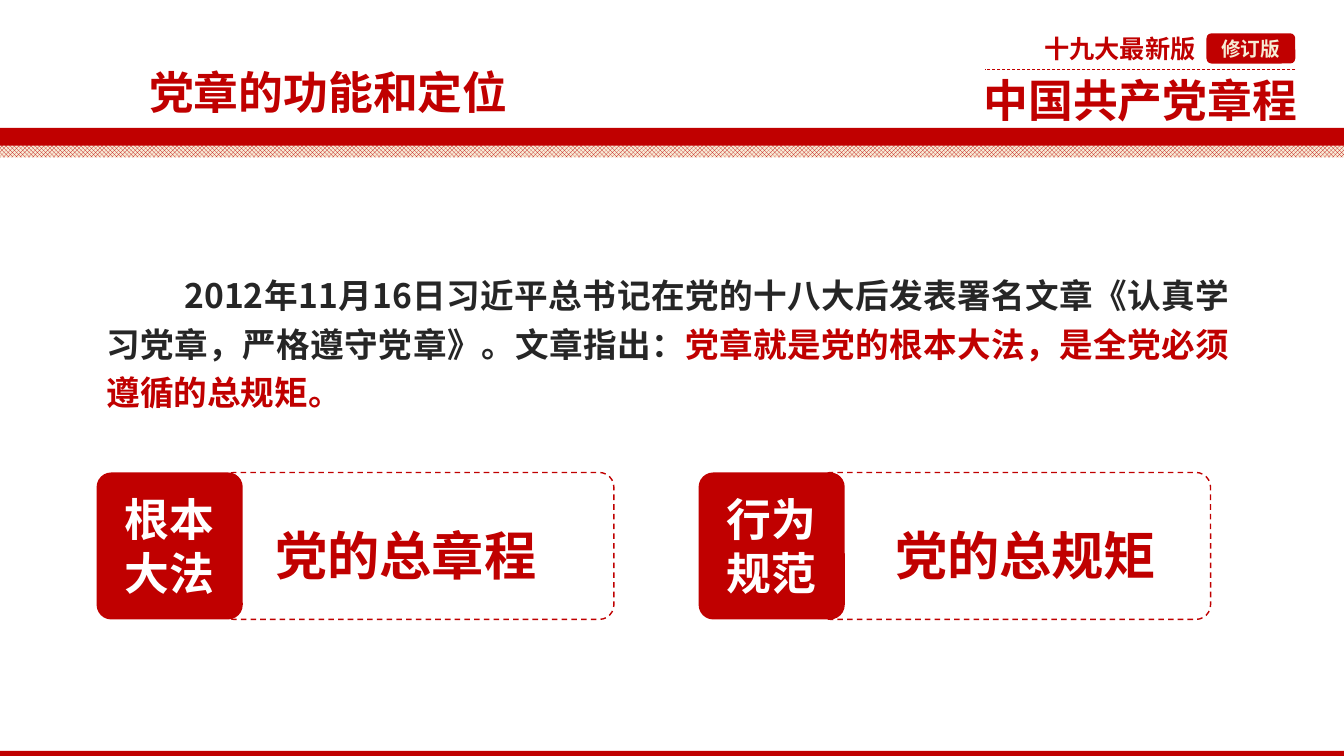
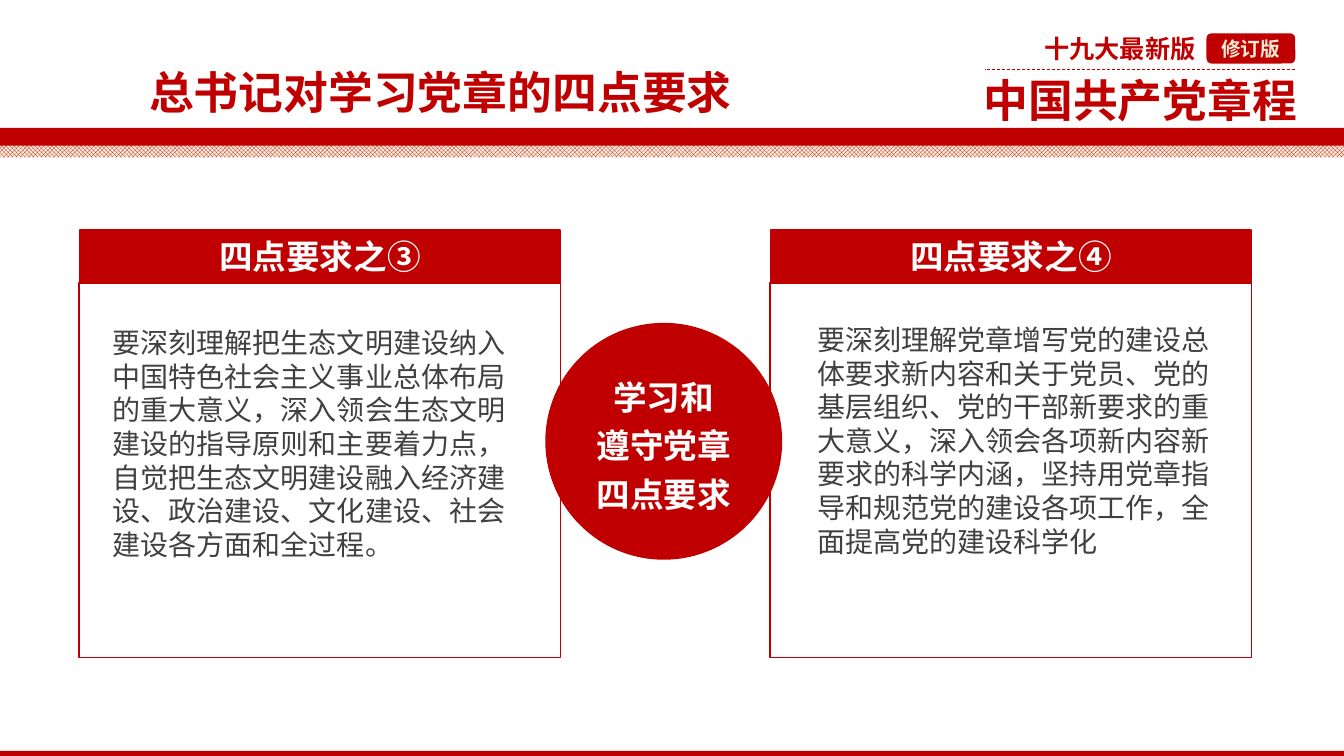
from lxml import etree
from pptx import Presentation
from pptx.dml.color import RGBColor
from pptx.enum import dml, shapes, text
from pptx.oxml.ns import qn
from pptx.util import Pt

RED, WHITE, CREAM, DARK, GREY = "C00000", "FFFFFF", "F6EDD6", "262626", "404040"
CJK = "Noto Sans CJK SC"
W, H = 960, 540
LEFT, CENTER, RIGHT, JUSTIFY = (text.PP_ALIGN.LEFT, text.PP_ALIGN.CENTER,
                                text.PP_ALIGN.RIGHT, text.PP_ALIGN.JUSTIFY)
TOP, MIDDLE = text.MSO_ANCHOR.TOP, text.MSO_ANCHOR.MIDDLE
RECT, ROUND, OVAL = (shapes.MSO_SHAPE.RECTANGLE, shapes.MSO_SHAPE.ROUNDED_RECTANGLE,
                     shapes.MSO_SHAPE.OVAL)

BRAND, EDITION, BADGE = "中国共产党章程", "十九大最新版", "修订版"

ROLE_TITLE = "党章的功能和定位"
ROLE_INTRO = [
    ("2012年11月16日习近平总书记在党的十八大后发表署名文章《认真学习党章，严格遵守党章》。文章指出：", DARK),
    ("党章就是党的根本大法，是全党必须遵循的总规矩。", RED),
]
# tag, statement, tag left, frame left, statement right edge
ROLES = [
    ("根本大法", "党的总章程", 69, 157, 390.2),
    ("行为规范", "党的总规矩", 499, 583.2, 833),
]

STUDY_TITLE = "总书记对学习党章的四点要求"
STUDY_HUB = ["学习和", "遵守党章四点要求"]
# heading, panel left, body text, body box (left, top, width)
STUDY_PANELS = [
    ("四点要求之③", 56.5,
     "要深刻理解把生态文明建设纳入中国特色社会主义事业总体布局的重大意义，深入领会生态文明建设的指导原则和主要着力点，"
     "自觉把生态文明建设融入经济建设、政治建设、文化建设、社会建设各方面和全过程。",
     (73.4, 229, 309.6)),
    ("四点要求之④", 550,
     "要深刻理解党章增写党的建设总体要求新内容和关于党员、党的基层组织、党的干部新要求的重大意义，"
     "深入领会各项新内容新要求的科学内涵，坚持用党章指导和规范党的建设各项工作，全面提高党的建设科学化",
     (576.7, 226.8, 303.1)),
]


def rgb(color):
    return RGBColor.from_string(color)


def write(sp, paras, size, color, bold=True, align=LEFT, anchor=TOP, spacing=1.0,
          font="Arial", indent=0):
    """Fill sp with paragraphs; each is a string or a list of (text, colour)."""
    tf = sp.text_frame
    tf.word_wrap, tf.vertical_anchor = True, anchor
    for i, para in enumerate(paras):
        p = tf.add_paragraph() if i else tf.paragraphs[0]
        p.alignment, p.line_spacing = align, spacing
        if indent:
            p._p.get_or_add_pPr().set("indent", str(Pt(indent)))
        runs = [(para, color)] if isinstance(para, str) else para
        for words, run_color in runs:
            r = p.add_run()
            r.text = words
            for name, value in {"size": Pt(size), "bold": bold, "name": font}.items():
                setattr(r.font, name, value)
            r.font.color.rgb = rgb(run_color)
            etree.SubElement(r._r.get_or_add_rPr(), qn("a:ea"), typeface=CJK)


def text_box(s, box, paras, size, color, **style):
    write(s.shapes.add_textbox(*map(Pt, box)), paras, size, color, **style)


def set_line(line, color, width, dashed):
    line.color.rgb, line.width = rgb(color), Pt(width)
    if dashed:
        line.dash_style = dml.MSO_LINE.DASH


def shape(s, kind, box, fill=None, line_width=0, dashed=False, corner=None):
    sp = s.shapes.add_shape(kind, *map(Pt, box))
    sp.shadow.inherit = False
    if fill:
        sp.fill.solid()
        sp.fill.fore_color.rgb = rgb(fill)
    else:
        sp.fill.background()
    if line_width:
        set_line(sp.line, RED, line_width, dashed)
    else:
        sp.line.fill.background()
    if corner:
        sp.adjustments[0] = corner
    return sp


def base_slide(prs, title):
    """Add a slide with the shared brand block, bands and title."""
    s = prs.slides.add_slide(prs.slide_layouts[6])
    text_box(s, (608.4, 48.2, 325.4, 46), [BRAND], 32, RED, align=RIGHT, font=CJK)
    text_box(s, (728.6, 20.2, 142.6, 29), [EDITION], 18, RED, align=CENTER, font=CJK)
    badge = shape(s, ROUND, (861.8, 23.8, 63.4, 21.6), RED)
    write(badge, [BADGE], 14, CREAM, align=CENTER, anchor=MIDDLE, font=CJK)
    rule = s.shapes.add_connector(shapes.MSO_CONNECTOR.STRAIGHT,
                                  *map(Pt, (925.2, 49.5, 703.4, 49.5)))
    set_line(rule.line, RED, 0.5, True)
    etree.SubElement(rule._element.spPr, qn("a:effectLst"))

    trellis = shape(s, RECT, (0, 103, W, 9.4), RED)
    trellis.fill.patterned()
    trellis.fill.pattern = dml.MSO_PATTERN.TRELLIS
    trellis.fill.fore_color.rgb = rgb(RED)
    trellis.fill.back_color.rgb = rgb("F7EDD8")
    shape(s, RECT, (0, 91.4, W, 12.7), RED)
    shape(s, RECT, (0, H - 3.6, W, 3.6), RED)
    text_box(s, (99.4, 31, 480, 60.5), [title], 32, RED, anchor=MIDDLE, spacing=1.2)
    return s


def role_slide(prs):
    s = base_slide(prs, ROLE_TITLE)
    text_box(s, (69, 187.2, 816.5, 112.3), [ROLE_INTRO], 24, DARK, align=JUSTIFY,
             spacing=1.2, font=CJK, indent=55.7)
    top, height, corner, statement_width = 337.5, 105, 0.1, 225
    for tag, statement, tag_left, frame_left, right in ROLES:
        sp = shape(s, ROUND, (tag_left, top, 104.4, height), RED, corner=corner)
        write(sp, [tag], 32, WHITE, align=CENTER, anchor=MIDDLE)
        shape(s, ROUND, (frame_left, top, 281.5, height), line_width=1, dashed=True,
              corner=corner)
        text_box(s, (right - statement_width, 361.4, statement_width, 57),
                 [statement], 37.3, RED, align=RIGHT, spacing=1.2)


def study_slide(prs):
    s = base_slide(prs, STUDY_TITLE)
    top, head, width = 164.3, 37.7, 344
    for heading, left, body, body_box in STUDY_PANELS:
        text_box(s, (*body_box, 177), [body], 20, GREY, bold=False)
        sp = shape(s, RECT, (left + 0.6, top, width - 1.2, head), RED, line_width=1.5)
        write(sp, [heading], 24, WHITE, align=CENTER, anchor=MIDDLE)
        shape(s, RECT, (left, top + head, width, 267.8), line_width=1)
    hub = shape(s, OVAL, (389.5, 230.6, 169.2, 169.2), RED)
    write(hub, STUDY_HUB, 24, WHITE, align=CENTER, anchor=MIDDLE, spacing=1.2)


def main():
    prs = Presentation()
    prs.slide_width, prs.slide_height = Pt(W), Pt(H)
    role_slide(prs)
    study_slide(prs)
    prs.save("out.pptx")


if __name__ == "__main__":
    main()
